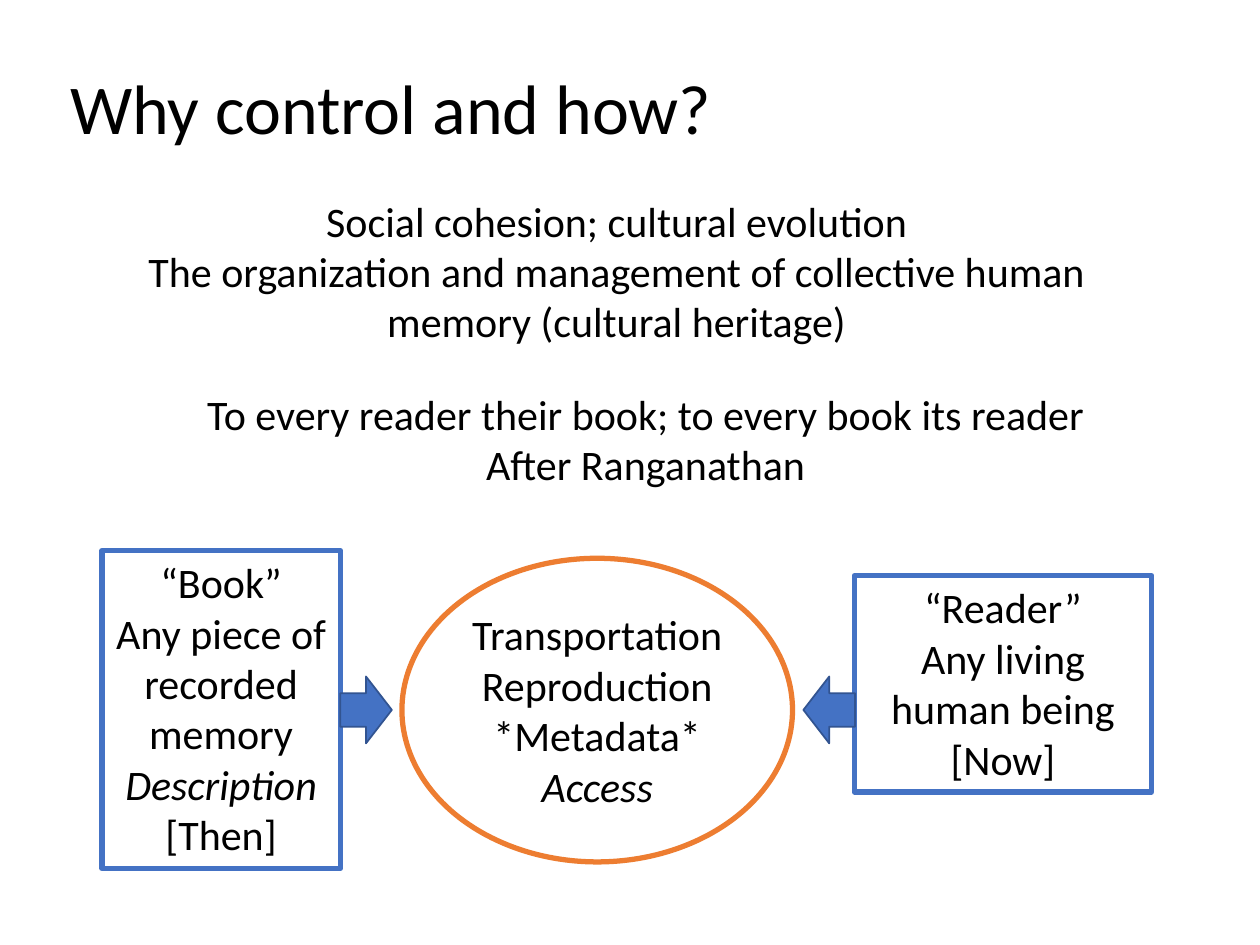
from dataclasses import dataclass

from pptx import Presentation
from pptx import util as u
from pptx.dml.color import RGBColor
from pptx.enum import shapes, text

FONT = "Calibri"
BLACK, BLUE, NAVY, ORANGE = "000000", "4472C4", "325491", "ED7D31"
KIND = shapes.MSO_SHAPE


@dataclass(frozen=True)
class Run:
    text: str
    italic: bool = False


@dataclass(frozen=True)
class Box:
    left: float
    top: float
    width: float
    height: float


@dataclass(frozen=True)
class Label:
    box: Box
    lines: tuple[Run, ...]
    size: float = 24
    align: text.PP_ALIGN = text.PP_ALIGN.CENTER
    wrap: bool = True


@dataclass(frozen=True)
class Node:
    kind: KIND
    line: str
    label: Label


@dataclass(frozen=True)
class Arrow:
    kind: KIND
    box: Box


LABELS = (
    Label(Box(33.1, 33.1, 384.5, 55.7), (Run("Why control and how?"),),
          40, text.PP_ALIGN.LEFT, False),
    Label(Box(58.3, 108, 588.2, 94.5), (
        Run("Social cohesion; cultural evolution"),
        Run("The organization and management of collective human memory (cultural heritage)"),
    )),
    Label(Box(74.9, 218.2, 588.2, 65.4), (
        Run("To every reader their book; to every book its reader"),
        Run("After Ranganathan"),
    )),
)

NODES = (
    Node(KIND.RECTANGLE, BLUE, Label(Box(58.3, 314.6, 136.1, 181.7), (
        Run("“Book”"), Run("Any piece of recorded memory"),
        Run("Description", italic=True), Run("[Then]"),
    ))),
    Node(KIND.RECTANGLE, BLUE, Label(Box(488.2, 329, 169.9, 123.6), (
        Run("“Reader”"), Run("Any living human being"), Run("[Now]"),
    ))),
    Node(KIND.OVAL, ORANGE, Label(Box(229.7, 319, 223.2, 173.5), (
        Run("Transportation"), Run("Reproduction"), Run("*Metadata*"),
        Run("Access", italic=True),
    ))),
)

ARROWS = (
    Arrow(KIND.RIGHT_ARROW, Box(194.4, 386.6, 29.5, 38.2)),
    Arrow(KIND.LEFT_ARROW, Box(459.1, 386.6, 29.5, 38.2)),
)


def colour(value: str) -> RGBColor:
    return RGBColor.from_string(value)


def place(box: Box) -> tuple[u.Length, ...]:
    return tuple(u.Pt(v) for v in (box.left, box.top, box.width, box.height))


def write(sp, label: Label) -> None:
    tf = sp.text_frame
    tf.word_wrap = label.wrap
    tf.auto_size = text.MSO_AUTO_SIZE.SHAPE_TO_FIT_TEXT
    tf.vertical_anchor = text.MSO_ANCHOR.TOP
    for i, run in enumerate(label.lines):
        p = tf.add_paragraph() if i else tf.paragraphs[0]
        p.alignment = label.align
        r = p.add_run()
        r.text = run.text
        r.font.name = FONT
        r.font.size = u.Pt(label.size)
        r.font.italic = run.italic
        r.font.color.rgb = colour(BLACK)


def add_outlined(s, kind: KIND, box: Box, line: str, width: float):
    sp = s.shapes.add_shape(kind, *place(box))
    sp.shadow.inherit = False
    sp.line.color.rgb = colour(line)
    sp.line.width = u.Pt(width)
    return sp


def add_label(s, label: Label) -> None:
    write(s.shapes.add_textbox(*place(label.box)), label)


def add_node(s, node: Node) -> None:
    sp = add_outlined(s, node.kind, node.label.box, node.line, 3)
    sp.fill.background()
    write(sp, node.label)


def add_arrow(s, arrow: Arrow) -> None:
    sp = add_outlined(s, arrow.kind, arrow.box, NAVY, 1)
    sp.fill.solid()
    sp.fill.fore_color.rgb = colour(BLUE)


def main() -> None:
    prs = Presentation()
    prs.slide_width, prs.slide_height = u.Pt(720), u.Pt(540)
    s = prs.slides.add_slide(prs.slide_layouts[6])
    for label in LABELS:
        add_label(s, label)
    for node in NODES:
        add_node(s, node)
    for arrow in ARROWS:
        add_arrow(s, arrow)
    prs.save("out.pptx")


if __name__ == "__main__":
    main()
